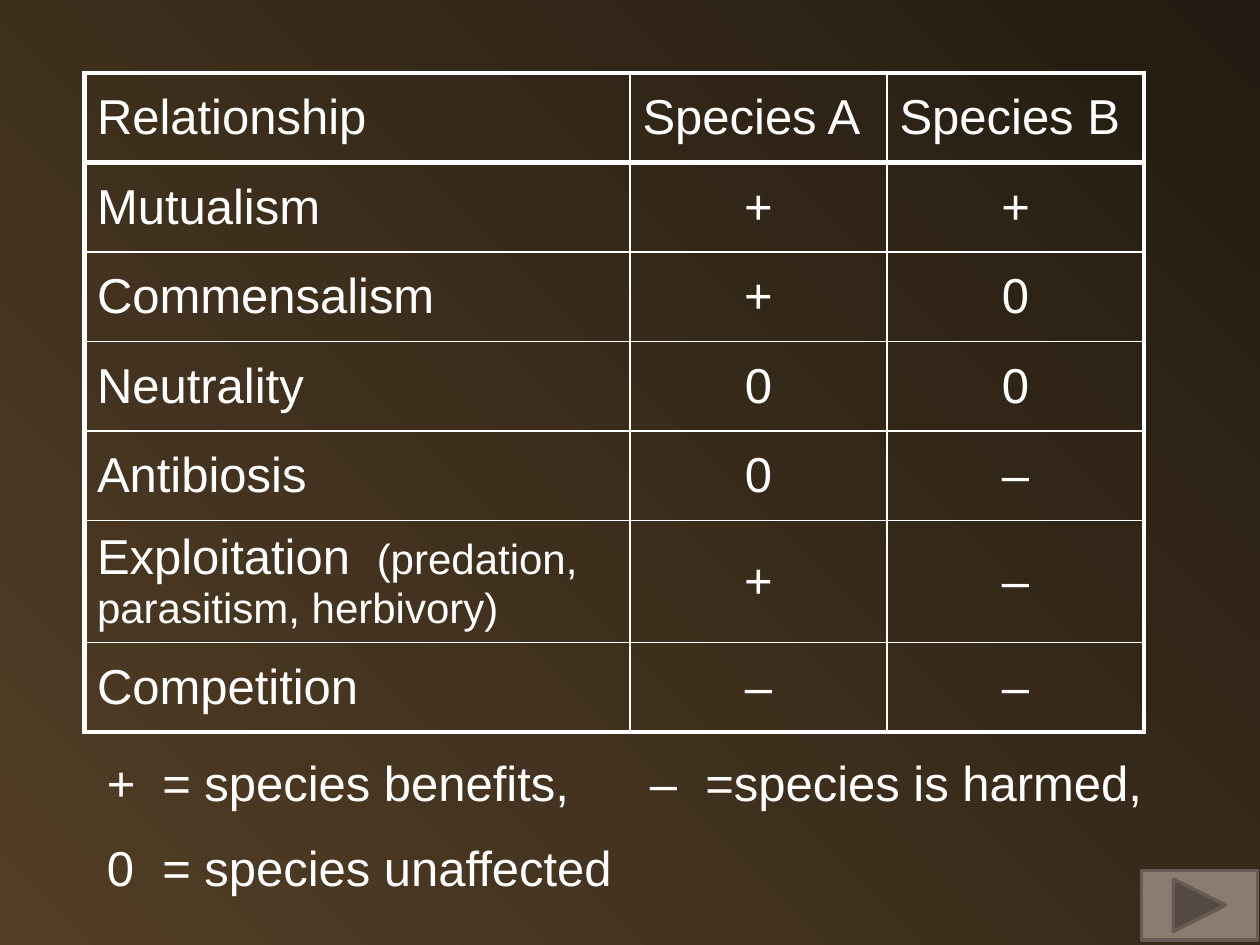
from dataclasses import dataclass

from lxml import etree
from pptx import Presentation
from pptx.dml.color import RGBColor
from pptx.enum.shapes import MSO_SHAPE
from pptx.enum.text import MSO_ANCHOR, PP_ALIGN
from pptx.oxml.ns import qn
from pptx.util import Inches, Pt

LEFT, CENTER = PP_ALIGN.LEFT, PP_ALIGN.CENTER
MIDDLE = MSO_ANCHOR.MIDDLE
NEXT_BUTTON = MSO_SHAPE.ACTION_BUTTON_FORWARD_OR_NEXT

SLIDE_WIDTH, SLIDE_HEIGHT = Inches(10), Inches(7.5)
FONT = "Arial"
WHITE = "FFFFFF"
THICK, THIN = 3, 1
COLUMN_WIDTHS = (4.33, 2.04, 2.04)
ROW_HEIGHT, TALL_ROW_HEIGHT = 0.71, 0.97


@dataclass(frozen=True)
class Relationship:
    name: str
    species_a: str
    species_b: str
    examples: str = ""


HEADER = Relationship("Relationship", "Species A", "Species B")
RELATIONSHIPS = (
    Relationship("Mutualism", "+", "+"),
    Relationship("Commensalism", "+", "0"),
    Relationship("Neutrality", "0", "0"),
    Relationship("Antibiosis", "0", "–"),
    Relationship("Exploitation", "+", "–", "(predation, parasitism, herbivory)"),
    Relationship("Competition", "–", "–"),
)
LEGEND = (
    "+\t= species benefits,\t–\t=species is harmed,",
    "0\t= species unaffected",
)


def color(value: str) -> RGBColor:
    return RGBColor.from_string(value)


def add_run(paragraph, text: str, size: float = 28) -> None:
    run = paragraph.add_run()
    run.text = text
    run.font.name = FONT
    run.font.size = Pt(size)
    run.font.color.rgb = color(WHITE)


def add_tab_stops(paragraph, *positions: float) -> None:
    """Set left tab stops, in inches from the text's left edge."""
    properties = paragraph._p.get_or_add_pPr()
    tab_list = etree.SubElement(properties, qn("a:tabLst"))
    for position in positions:
        etree.SubElement(tab_list, qn("a:tab"), pos=str(Inches(position)), algn="l")


def set_borders(cell, left: int, right: int, top: int, bottom: int) -> None:
    """Draw white borders, with widths in points."""
    properties = cell._tc.get_or_add_tcPr()
    widths = {"a:lnL": left, "a:lnR": right, "a:lnT": top, "a:lnB": bottom}
    for index, (tag, width) in enumerate(widths.items()):
        line = etree.Element(qn(tag), w=str(Pt(width)))
        fill = etree.SubElement(line, qn("a:solidFill"))
        etree.SubElement(fill, qn("a:srgbClr"), val=WHITE)
        properties.insert(index, line)


def add_background(slide) -> None:
    fill = slide.background.fill
    fill.gradient()
    fill.gradient_angle = 45
    for stop, value in zip(fill.gradient_stops, ("523E26", "231B11")):
        stop.color.rgb = color(value)


def add_relationship_table(slide) -> None:
    records = (HEADER, *RELATIONSHIPS)
    last_row, last_column = len(records) - 1, len(COLUMN_WIDTHS) - 1
    heights = [TALL_ROW_HEIGHT if record.examples else ROW_HEIGHT for record in records]
    table = slide.shapes.add_table(
        len(records), len(COLUMN_WIDTHS), Inches(0.67), Inches(0.58),
        Inches(sum(COLUMN_WIDTHS)), Inches(sum(heights)),
    ).table
    table.first_row = table.horz_banding = False
    for column, width in zip(table.columns, COLUMN_WIDTHS):
        column.width = Inches(width)

    for row, record in enumerate(records):
        table.rows[row].height = Inches(heights[row])
        for column, text in enumerate((record.name, record.species_a, record.species_b)):
            cell = table.cell(row, column)
            cell.fill.background()
            cell.vertical_anchor = MIDDLE
            set_borders(
                cell,
                left=THICK if column == 0 else THIN,
                right=THICK if column == last_column else THIN,
                top=THICK if row in (0, 1) else THIN,
                bottom=THICK if row in (0, last_row) else THIN,
            )
            paragraph = cell.text_frame.paragraphs[0]
            paragraph.alignment = CENTER if row and column else LEFT
            paragraph.space_before = Pt(5.6)
            add_run(paragraph, text)
            if column == 0 and record.examples:
                add_tab_stops(paragraph, 2.22)
                add_run(paragraph, "\t" + record.examples, 24)


def add_legend(slide) -> None:
    box = slide.shapes.add_textbox(Inches(0.75), Inches(5.92), Inches(8.67), Inches(1.27))
    frame = box.text_frame
    frame.word_wrap = True
    for index, text in enumerate(LEGEND):
        paragraph = frame.add_paragraph() if index else frame.paragraphs[0]
        paragraph.space_before = Pt(15)
        add_tab_stops(paragraph, 0.44, 4.31, 4.75)
        add_run(paragraph, text)


def add_next_button(slide) -> None:
    button = slide.shapes.add_shape(
        NEXT_BUTTON, Inches(9.06), Inches(6.91), Inches(0.92), Inches(0.55)
    )
    button.shadow.inherit = False
    button.fill.solid()
    button.fill.fore_color.rgb = color("8C7B70")
    button.line.color.rgb = color("685B53")
    button.line.width = Pt(2)


def main() -> None:
    presentation = Presentation()
    presentation.slide_width, presentation.slide_height = SLIDE_WIDTH, SLIDE_HEIGHT
    slide = presentation.slides.add_slide(presentation.slide_layouts[6])
    add_background(slide)
    add_relationship_table(slide)
    add_legend(slide)
    add_next_button(slide)
    presentation.save("out.pptx")


if __name__ == "__main__":
    main()
